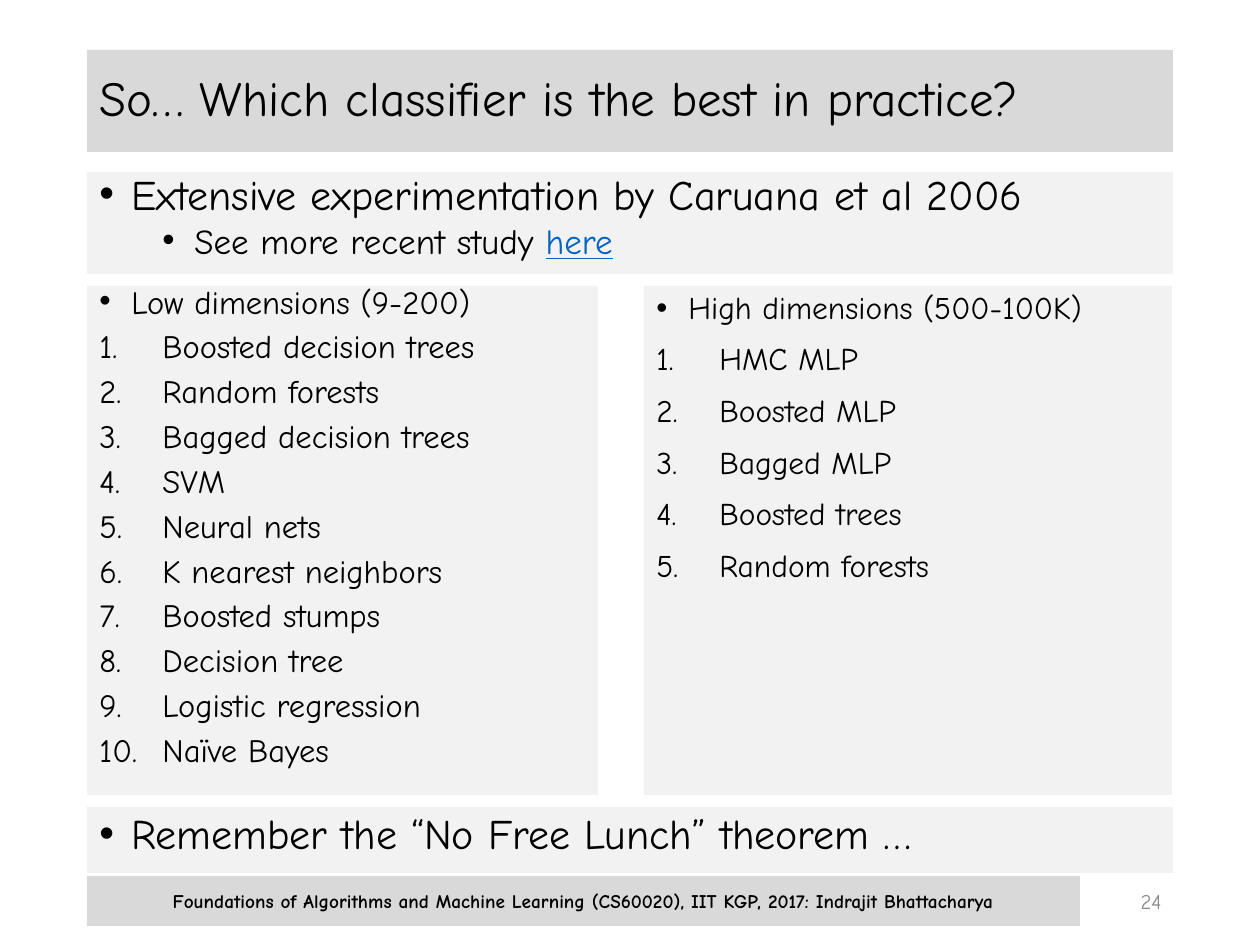
from dataclasses import dataclass

from lxml import etree
from pptx import Presentation
from pptx.dml.color import RGBColor
from pptx.enum.shapes import MSO_SHAPE
from pptx.enum.text import MSO_ANCHOR, PP_ALIGN
from pptx.oxml.ns import qn
from pptx.util import Emu, Pt

RECT = MSO_SHAPE.RECTANGLE
TOP, MIDDLE = MSO_ANCHOR.TOP, MSO_ANCHOR.MIDDLE
LEFT, CENTER, RIGHT = PP_ALIGN.LEFT, PP_ALIGN.CENTER, PP_ALIGN.RIGHT
PX = 914400 / 126
MARGIN, FULL_WIDTH = 87, 1086
COLUMN_TOP, COLUMN_HEIGHT = 286, 509
FOOTER_TOP, FOOTER_HEIGHT = 876, 50
BULLET_HANG, NUMBER_HANG, SUB_INDENT = 32, 63, 95


@dataclass(frozen=True)
class Theme:
    font: str = "Comic Neue"
    bullet_font: str = "Arial"
    ink: str = "000000"
    bar: str = "D9D9D9"
    panel: str = "F2F2F2"
    link: str = "0563C1"
    muted: str = "8C8C8C"
    title: float = 28
    body: float = 24
    sub: float = 20
    low_list: float = 18.6
    high_list: float = 18
    number: float = 12
    footer: float = 11


THEME = Theme()
LOW = ["Boosted decision trees", "Random forests", "Bagged decision trees", "SVM",
       "Neural nets", "K nearest neighbors", "Boosted stumps", "Decision tree",
       "Logistic regression", "Naïve Bayes"]
HIGH = ["HMC MLP", "Boosted MLP", "Bagged MLP", "Boosted trees", "Random forests"]


def px(n):
    return Emu(round(n * PX))


def prepare_frame(sp, anchor):
    tf = sp.text_frame
    tf.word_wrap = True
    tf.vertical_anchor = anchor
    return tf


def add_panel(slide, x, y, w, h, fill, anchor=TOP):
    sp = slide.shapes.add_shape(RECT, px(x), px(y), px(w), px(h))
    sp.shadow.inherit = False
    sp.fill.solid()
    sp.fill.fore_color.rgb = RGBColor.from_string(fill)
    sp.line.fill.background()
    return prepare_frame(sp, anchor)


def add_label(slide, x, y, w, h):
    return prepare_frame(slide.shapes.add_textbox(px(x), px(y), px(w), px(h)), MIDDLE)


def add_paragraph(tf, align=LEFT, spacing=1.0, before=0):
    first = tf.paragraphs[0]
    p = tf.add_paragraph() if first.runs else first
    p.alignment = align
    p.line_spacing = spacing
    p.space_before = Pt(before)
    return p


def add_run(p, text, size, color=THEME.ink, bold=False, underline=False):
    r = p.add_run()
    r.text = text
    r.font.name = THEME.font
    r.font.size = Pt(size)
    r.font.bold = bold
    r.font.underline = underline
    r.font.color.rgb = RGBColor.from_string(color)


def set_indent(p, left, hang):
    pPr = p._p.get_or_add_pPr()
    pPr.set("marL", str(px(left)))
    pPr.set("indent", str(-px(hang)))
    return pPr


def add_bullet(tf, spacing, before=10, left=BULLET_HANG, level=0):
    p = add_paragraph(tf, spacing=spacing, before=before)
    p.level = level
    pPr = set_indent(p, left, BULLET_HANG)
    etree.SubElement(pPr, qn("a:buFont"), typeface=THEME.bullet_font)
    etree.SubElement(pPr, qn("a:buChar"), char="•")
    return p


def add_numbered(tf, spacing):
    p = add_paragraph(tf, spacing=spacing, before=10)
    pPr = set_indent(p, NUMBER_HANG, NUMBER_HANG)
    etree.SubElement(pPr, qn("a:buFont"), typeface=THEME.font)
    etree.SubElement(pPr, qn("a:buAutoNum"), type="arabicPeriod")
    return p


def add_ranking(slide, x, w, heading, names, size, spacing):
    tf = add_panel(slide, x, COLUMN_TOP, w, COLUMN_HEIGHT, THEME.panel)
    add_run(add_bullet(tf, spacing), heading, size)
    for name in names:
        add_run(add_numbered(tf, spacing), name, size)


def main():
    prs = Presentation()
    prs.slide_width, prs.slide_height = px(1260), px(945)
    slide = prs.slides.add_slide(prs.slide_layouts[6])

    tf = add_panel(slide, MARGIN, 50, FULL_WIDTH, 102, THEME.bar, MIDDLE)
    add_run(add_paragraph(tf, spacing=0.9),
            "So… Which classifier is the best in practice?", THEME.title)

    tf = add_panel(slide, MARGIN, 172, FULL_WIDTH, 102, THEME.panel)
    add_run(add_bullet(tf, 0.8), "Extensive experimentation by Caruana et al 2006", THEME.body)
    p = add_bullet(tf, 0.8, before=5, left=SUB_INDENT, level=1)
    add_run(p, "See more recent study ", THEME.sub)
    add_run(p, "here", THEME.sub, THEME.link, underline=True)

    tf = add_panel(slide, MARGIN, FOOTER_TOP, 993, FOOTER_HEIGHT, THEME.bar, MIDDLE)
    add_run(add_paragraph(tf, CENTER),
            "Foundations of Algorithms and Machine Learning (CS60020), "
            "IIT KGP, 2017: Indrajit Bhattacharya", THEME.footer, bold=True)

    tf = add_label(slide, 1092, FOOTER_TOP, 82, FOOTER_HEIGHT)
    add_run(add_paragraph(tf, RIGHT), "24", THEME.number, THEME.muted)

    add_ranking(slide, MARGIN, 511, "Low dimensions (9-200)", LOW, THEME.low_list, 0.7)
    add_ranking(slide, 644, 528, "High dimensions (500-100K)", HIGH, THEME.high_list, 0.9)

    tf = add_panel(slide, MARGIN, 807, FULL_WIDTH, 66, THEME.panel)
    add_run(add_bullet(tf, 0.9), "Remember the “No Free Lunch” theorem …", THEME.body)

    prs.save("out.pptx")


if __name__ == "__main__":
    main()
